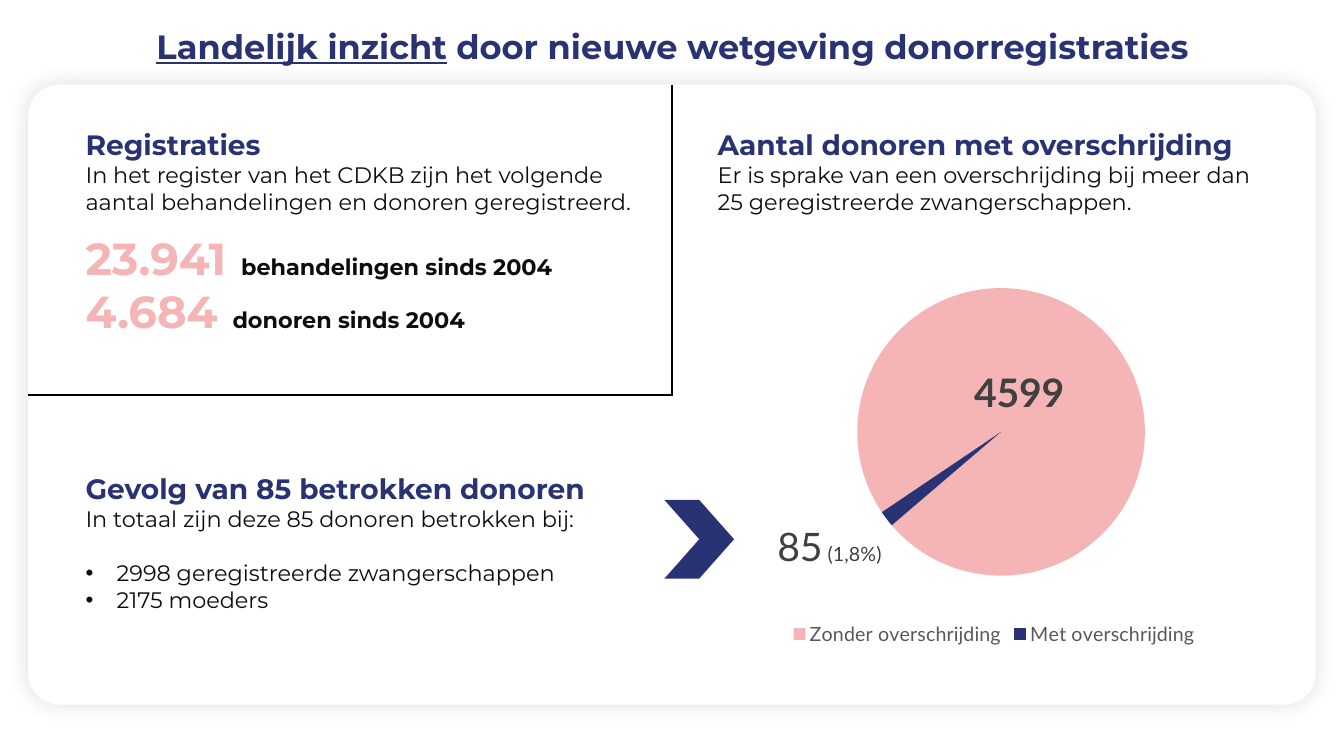
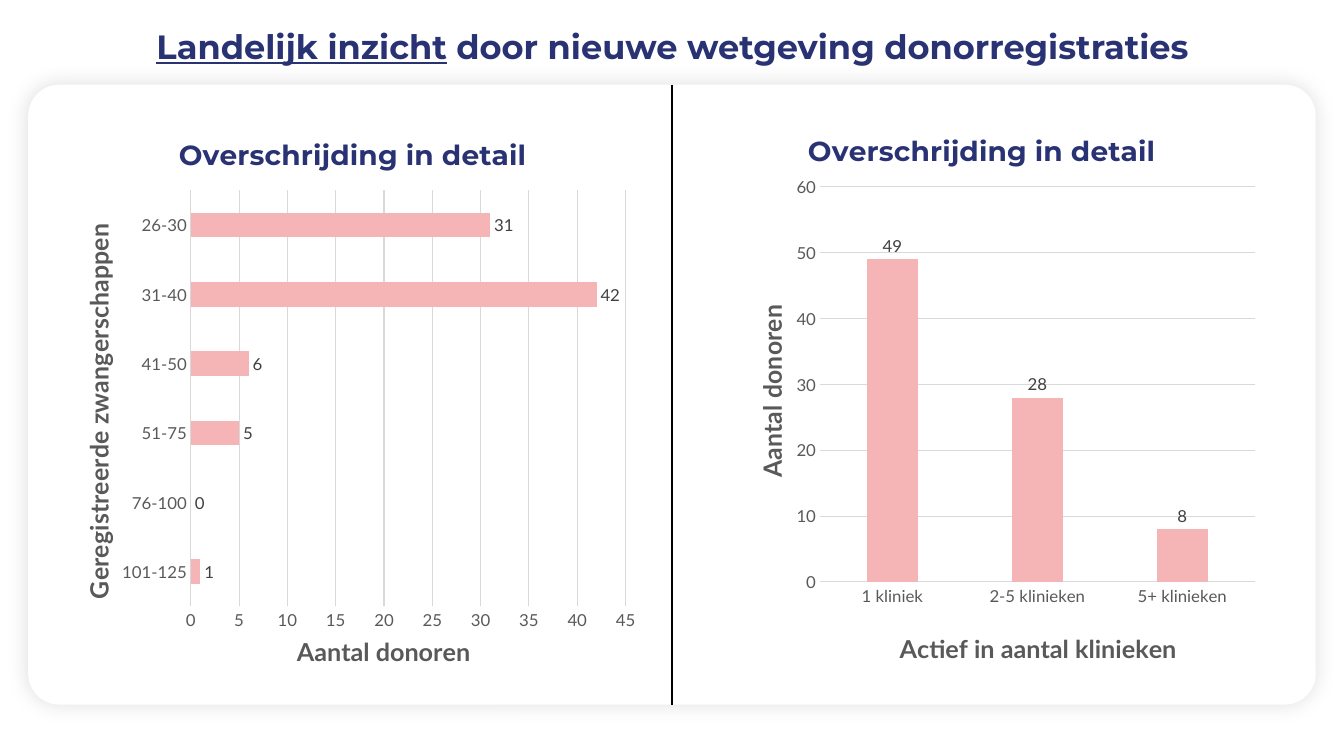
from pptx import Presentation
from pptx.chart.data import CategoryChartData
from pptx.dml.color import RGBColor
from pptx.enum.chart import XL_CHART_TYPE, XL_LABEL_POSITION, XL_LEGEND_POSITION, XL_TICK_MARK
from pptx.enum.shapes import MSO_CONNECTOR, MSO_SHAPE
from pptx.enum.text import MSO_AUTO_SIZE, PP_ALIGN
from pptx.oxml import parse_xml
from pptx.oxml.ns import nsdecls, qn
from pptx.util import Pt

EMU_PER_PX = 9144
COLORS = {
    "navy": "293273", "pink": "F5B4B5", "white": "FFFFFF", "black": "000000",
    "ink": "0D0D0D", "label": "404040", "axis": "595959", "grid": "D9D9D9",
}
SANS, CHART = "Montserrat", "Lato"
TITLE = dict(name=SANS, size=Pt(24), bold=True, color="navy")
HEADING = dict(TITLE, size=Pt(20))
BODY = dict(name=SANS, size=Pt(16), bold=False, color="ink")
STRONG = dict(BODY, bold=True)
FIGURE = dict(name=SANS, size=Pt(32), bold=True, color="pink")
GAP = dict(HEADING, spacing=500)
AXIS = dict(name=CHART, size=Pt(12), bold=False, color="axis")
AXIS_TITLE = dict(AXIS, size=Pt(18), bold=True)
LEGEND = dict(AXIS, size=Pt(14))
BAR_LABEL = dict(AXIS, color="label")
PIE_LABEL = dict(BAR_LABEL, size=Pt(28), bold=True)
PIE_SMALL = dict(BAR_LABEL, size=Pt(14))

TITLE_BOX = (48, 21, 1238, 50)
PANEL_BOX = (28, 84, 1277, 615)


def px(*values):
    return [round(v * EMU_PER_PX) for v in values]


def rgb(key):
    return RGBColor.from_string(COLORS[key])


def style(font, fmt):
    for key, value in fmt.items():
        if key == "color":
            font.color.rgb = rgb(value)
        elif key != "spacing":
            setattr(font, key, value)


def add_run(p, text, fmt):
    r = p.add_run()
    r.text = text
    style(r.font, fmt)
    if "spacing" in fmt:
        r.font._element.set("spc", str(fmt["spacing"]))


def add_text(s, box, paragraphs):
    tf = s.shapes.add_textbox(*px(*box)).text_frame
    tf.word_wrap = True
    tf.auto_size = MSO_AUTO_SIZE.SHAPE_TO_FIT_TEXT
    for i, (runs, fmt) in enumerate(paragraphs):
        p = tf.add_paragraph() if i else tf.paragraphs[0]
        for text, font in runs:
            add_run(p, text, font)
        for key, value in fmt.items():
            if key == "bullet":
                add_bullet(p, value)
            else:
                setattr(p, key, value)


def add_bullet(p, indent):
    pPr = p._p.get_or_add_pPr()
    margin = px(indent)[0]
    pPr.set("marL", str(margin))
    pPr.set("indent", str(-margin))
    pPr.append(parse_xml(f'<a:buFont {nsdecls("a")} typeface="Arial"/>'))
    pPr.append(parse_xml(f'<a:buChar {nsdecls("a")} char="•"/>'))


def add_block(s, box, heading, intro, *rest):
    add_text(s, box, [([(heading, HEADING)], dict(line_spacing=1.5)),
                      ([(intro, BODY)], {}), *rest])


def add_filled(s, kind, box, color):
    sp = s.shapes.add_shape(kind, *px(*box))
    sp.shadow.inherit = False
    sp.fill.solid()
    sp.fill.fore_color.rgb = rgb(color)
    sp.line.fill.background()
    return sp


def add_panel(s, box):
    sp = add_filled(s, MSO_SHAPE.ROUNDED_RECTANGLE, box, "white")
    sp.adjustments[0] = 0.05
    glow = (f'<a:outerShdw {nsdecls("a")} blurRad="{Pt(16)}" dist="0" dir="0" algn="ctr" '
            f'rotWithShape="0"><a:srgbClr val="{COLORS["black"]}"><a:alpha val="12000"/>'
            '</a:srgbClr></a:outerShdw>')
    sp._element.spPr.find(qn("a:effectLst")).append(parse_xml(glow))
    return sp


def add_divider(s, start, end):
    line = s.shapes.add_connector(MSO_CONNECTOR.STRAIGHT, *px(*start, *end))
    line.line.color.rgb = rgb("black")
    line.line.width = Pt(1.5)
    line._element.spPr.append(parse_xml(f'<a:effectLst {nsdecls("a")}/>'))
    return line


def add_base(prs):
    s = prs.slides.add_slide(prs.slide_layouts[6])
    add_text(s, TITLE_BOX, [([("Landelijk inzicht", dict(TITLE, underline=True)),
                              (" door nieuwe wetgeving donorregistraties", TITLE)],
                             dict(alignment=PP_ALIGN.CENTER))])
    return s, add_panel(s, PANEL_BOX)


def set_layout(parent, index, x, y, size=None):
    for old in parent.findall(qn("c:layout")):
        parent.remove(old)
    parts = [("x", x), ("y", y)]
    modes = ""
    if size:
        parts += zip("wh", size)
        modes = '<c:layoutTarget val="inner"/>'
    if size or parent.tag == qn("c:title"):
        modes += '<c:xMode val="edge"/><c:yMode val="edge"/>'
    values = "".join(f'<c:{k} val="{v}"/>' for k, v in parts)
    parent.insert(index, parse_xml(
        f'<c:layout {nsdecls("c")}><c:manualLayout>{modes}{values}</c:manualLayout></c:layout>'))


def add_chart(s, kind, box, cats, vals, plot):
    data = CategoryChartData()
    data.categories = cats
    data.add_series("Series 1", vals)
    chart = s.shapes.add_chart(kind, *px(*box), data).chart
    style(chart.font, dict(name=CHART, size=Pt(10), color="black"))
    chart.has_legend = chart.has_title = False
    set_layout(chart.element.chart.plotArea, 0, plot[0], plot[1], plot[2:])
    chart.plots[0].vary_by_categories = False
    return chart


def fill_point(item, color):
    item.format.fill.solid()
    item.format.fill.fore_color.rgb = rgb(color)


def label_series(series, fmt):
    labels = series.data_labels
    labels.show_value = True
    labels.position = XL_LABEL_POSITION.OUTSIDE_END
    style(labels.font, fmt)


def set_chart_title(owner, text, fmt, spot, upright=False):
    title = owner.chart_title if hasattr(owner, "chart_title") else owner.axis_title
    tf = title.text_frame
    add_run(tf.paragraphs[0], text, fmt)
    if upright:
        tf._txBody.bodyPr.set("rot", "-5400000")
        tf._txBody.bodyPr.set("vert", "horz")
    set_layout(title._element, 1, *spot)


def add_pie(s, box):
    chart = add_chart(s, XL_CHART_TYPE.PIE, box,
                      ["Zonder overschrijding", "Met overschrijding"], [4599, 85],
                      (0.255, 0.088, 0.515, 0.725))
    plot = chart.plots[0]
    plot.vary_by_categories = True
    angle = plot._element.find(qn("c:firstSliceAng"))
    if angle is None:
        angle = parse_xml(f'<c:firstSliceAng {nsdecls("c")}/>')
        plot._element.append(angle)
    angle.set("val", "236")
    series = plot.series[0]
    for i, color in enumerate(("pink", "navy")):
        fill_point(series.points[i], color)
    label_series(series, PIE_LABEL)
    without, over = (series.points[i].data_label for i in range(2))
    style(without.font, PIE_LABEL)
    without.position = XL_LABEL_POSITION.CENTER
    p = over.text_frame.paragraphs[0]
    add_run(p, "85", dict(PIE_LABEL, bold=False))
    add_run(p, " (1,8%)", PIE_SMALL)
    over.position = XL_LABEL_POSITION.OUTSIDE_END
    set_layout(series._element.findall(".//" + qn("c:dLbl"))[0], 1, -0.07, 0.01)
    chart.has_legend = True
    chart.legend.position = XL_LEGEND_POSITION.BOTTOM
    chart.legend.include_in_layout = False
    style(chart.legend.font, LEGEND)


def add_bars(s, box, kind, cats, vals, top, step, plot, title_y, cat_title, val_title):
    chart = add_chart(s, kind, box, cats, vals, plot)
    set_chart_title(chart, "Overschrijding in detail", HEADING, (0.2, title_y))
    bars = chart.plots[0]
    bars.gap_width = 182
    fill_point(bars.series[0], "pink")
    label_series(bars.series[0], BAR_LABEL)
    cat, val = chart.category_axis, chart.value_axis
    sideways = kind == XL_CHART_TYPE.BAR_CLUSTERED
    for axis, (text, spot), upright in ((cat, cat_title, sideways),
                                        (val, val_title, not sideways)):
        axis.major_tick_mark = axis.minor_tick_mark = XL_TICK_MARK.NONE
        style(axis.tick_labels.font, AXIS)
        set_chart_title(axis, text, AXIS_TITLE, spot, upright)
    val.minimum_scale, val.maximum_scale, val.major_unit = 0, top, step
    val.has_major_gridlines = True
    val.format.line.fill.background()
    cat.has_major_gridlines = False
    for line in (cat.format.line, val.major_gridlines.format.line):
        line.color.rgb = rgb("grid")
        line.width = Pt(0.75)


def build_overview(prs):
    s, panel = add_base(prs)
    x, y, w, h = PANEL_BOX
    figures = [([(number, FIGURE), (" ", GAP), (text, STRONG)], dict(space_before=Pt(gap)))
               for number, text, gap in (("23.941", "behandelingen sinds 2004", 11),
                                         ("4.684", "donoren sinds 2004", 0))]
    add_block(s, (x + 47, y + 21, 568, 271), "Registraties",
              "In het register van het CDKB zijn het volgende aantal behandelingen "
              "en donoren geregistreerd.", *figures)
    add_pie(s, (x + 681, y + 167, 554, 394))
    add_block(s, (x + 674, y + 21, 568, 114), "Aantal donoren met overschrijding",
              "Er is sprake van een overschrijding bij meer dan "
              "25 geregistreerde zwangerschappen.")
    add_divider(s, (x + w / 2, y), (x + w / 2, y + 309)).begin_connect(panel, 0)
    add_divider(s, (x, y + 308), (x + w / 2, y + 308))
    add_filled(s, MSO_SHAPE.CHEVRON, (x + 631, y + 412, 69, 78), "navy")
    bullets = [([(text, BODY)], dict(space_before=Pt(gap), bullet=31))
               for text, gap in (("2998 geregistreerde zwangerschappen", 19.5),
                                 ("2175 moeders", 0))]
    add_block(s, (x + 47, y + 362, 553, 168), "Gevolg van 85 betrokken donoren",
              "In totaal zijn deze 85 donoren betrokken bij:", *bullets)


def build_detail(prs):
    s, panel = add_base(prs)
    x, y, w, h = PANEL_BOX
    add_bars(s, (x + 28, y + 21, 582, 564), XL_CHART_TYPE.BAR_CLUSTERED,
             ["101-125", "76-100", "51-75", "41-50", "31-40", "26-30"],
             [1, 0, 5, 6, 42, 31], 45, 5, (0.229, 0.151, 0.741, 0.744), 0.044,
             ("Geregistreerde zwangerschappen", (0.033, 0.213)),
             ("Aantal donoren", (0.402, 0.936)))
    line = add_divider(s, (x + w / 2, y), (x + w / 2, y + h))
    line.begin_connect(panel, 0)
    line.end_connect(panel, 2)
    add_bars(s, (x + 652, y + 18, 582, 564), XL_CHART_TYPE.COLUMN_CLUSTERED,
             ["1 kliniek", "2-5 klinieken", "5+ klinieken"],
             [49, 28, 8], 60, 10, (0.229, 0.151, 0.741, 0.709), 0.042,
             ("Actief in aantal klinieken", (0.357, 0.94)),
             ("Aantal donoren", (0.108, 0.36)))


def main():
    prs = Presentation()
    prs.slide_width, prs.slide_height = px(1333, 750)
    build_overview(prs)
    build_detail(prs)
    prs.save("out.pptx")


if __name__ == "__main__":
    main()
